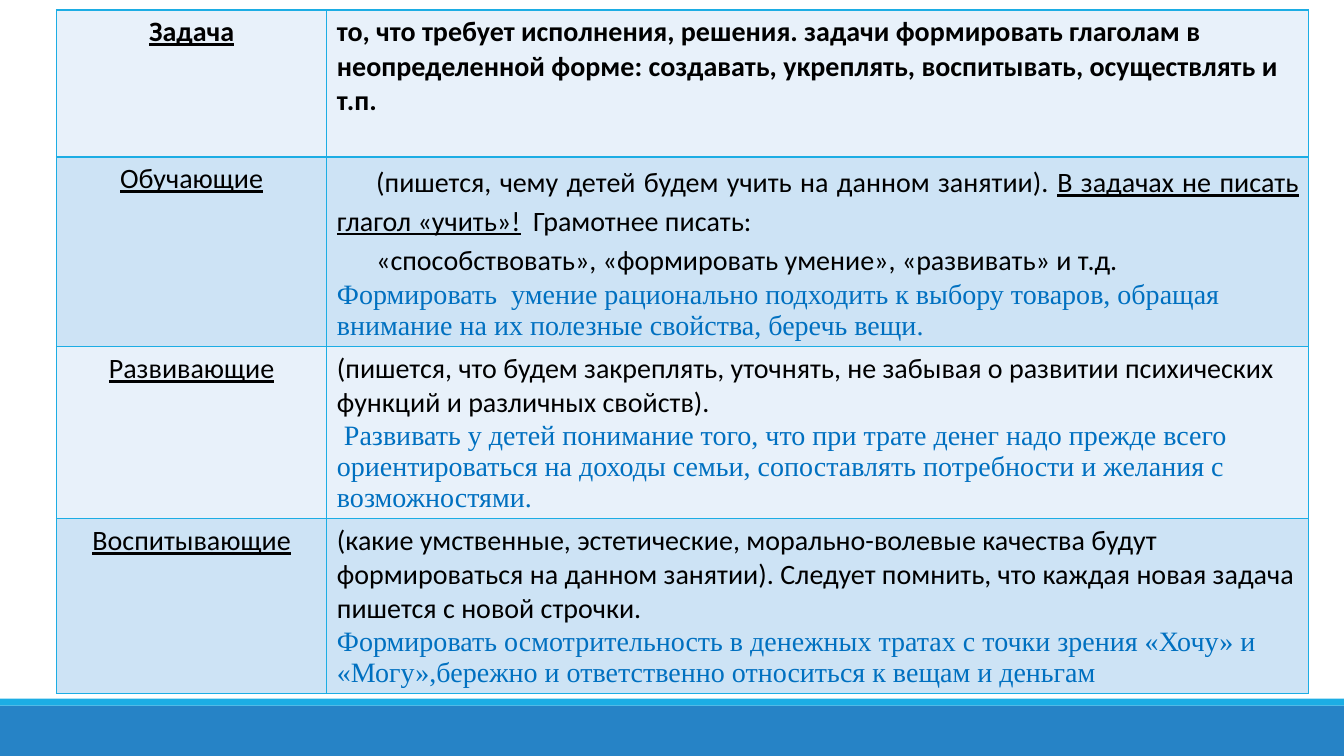
from lxml.etree import SubElement
from pptx import Presentation
from pptx.dml.color import RGBColor
from pptx.enum.shapes import MSO_SHAPE as Shape
from pptx.enum.text import PP_ALIGN as Align
from pptx.oxml.ns import qn
from pptx.util import Pt

THEME = {
    "body": ("Calibri", "000000"),
    "example": ("Times New Roman", "0070C0"),
    "size": 20,
    "rows": ("E8F1FA", "CDE3F5"),
    "border": "1CADE4",
    "border_width": 1,
    "stripe": "1CADE4",
    "footer": "2683C6",
}

# Content: (heading, paragraphs, row height); a paragraph is (kind, runs),
# a run is (text, underlined)
TASKS = [
    ("Задача", [
        ("bold", [("то, что требует исполнения, решения. задачи формировать глаголам в "
                   "неопределенной форме: создавать, укреплять, воспитывать, "
                   "осуществлять и т.п.", False)]),
    ], 105),
    ("Обучающие", [
        ("indented", [("(пишется, чему детей будем учить на данном занятии). ", False),
                      ("В задачах не писать глагол «учить»!", True),
                      ("  Грамотнее писать:", False)]),
        ("indented", [("«способствовать», «формировать умение», «развивать» и т.д.", False)]),
        ("example", [("Формировать  умение рационально подходить к выбору товаров, обращая "
                      "внимание на их полезные свойства, беречь вещи.", False)]),
    ], 135.2),
    ("Развивающие", [
        ("plain", [("(пишется, что будем закреплять, уточнять, не забывая о развитии "
                    "психических функций и различных свойств).", False)]),
        ("example", [(" Развивать у детей понимание того, что при трате денег надо прежде "
                      "всего ориентироваться на доходы семьи, сопоставлять потребности и "
                      "желания с возможностями.", False)]),
    ], 122.8),
    ("Воспитывающие", [
        ("plain", [("(какие умственные, эстетические, морально-волевые качества будут "
                    "формироваться на данном занятии). Следует помнить, что каждая новая "
                    "задача пишется с новой строчки.", False)]),
        ("example", [("Формировать осмотрительность в денежных тратах с точки зрения «Хочу» и "
                      "«Могу»,бережно и ответственно относиться к вещам и деньгам", False)]),
    ], 125),
]

# Layout
SLIDE_W, SLIDE_H = 960, 540
TABLE_LEFT, TABLE_TOP = 40.3, 7.2
COLUMNS = (193.2, 701.4)
FOOTER_TOP, STRIPE_H = 504, 5
FIRST_INDENT = 28


def add_band(slide, top, height, color):
    band = slide.shapes.add_shape(Shape.RECTANGLE, 0, Pt(top), Pt(SLIDE_W), Pt(height))
    band.shadow.inherit = False
    band.fill.solid()
    band.fill.fore_color.rgb = RGBColor.from_string(color)
    band.line.fill.background()


def style_cell(cell, fill):
    props = cell._tc.get_or_add_tcPr()
    for side in ("a:lnL", "a:lnR", "a:lnT", "a:lnB"):
        edge = SubElement(props, qn(side), w=str(Pt(THEME["border_width"])))
        SubElement(SubElement(edge, qn("a:solidFill")), qn("a:srgbClr"), val=THEME["border"])
    cell.fill.solid()
    cell.fill.fore_color.rgb = RGBColor.from_string(fill)


def write_paragraph(paragraph, kind, runs):
    if kind == "heading":
        paragraph.alignment = Align.CENTER
    elif kind == "indented":
        paragraph.alignment = Align.JUSTIFY
        paragraph.line_spacing = 1.12
        paragraph.space_after = Pt(0.8)
        props = paragraph._p.get_or_add_pPr()
        props.set("marL", "0")
        props.set("indent", str(Pt(FIRST_INDENT)))
    face, color = THEME["example" if kind == "example" else "body"]
    for text, underlined in runs:
        run = paragraph.add_run()
        run.text = text
        font = run.font
        font.name, font.size = face, Pt(THEME["size"])
        font.bold = kind == "bold"
        font.underline = underlined
        font.color.rgb = RGBColor.from_string(color)


def write_cell(cell, paragraphs):
    frame = cell.text_frame
    for i, (kind, runs) in enumerate(paragraphs):
        paragraph = frame.add_paragraph() if i else frame.paragraphs[0]
        write_paragraph(paragraph, kind, runs)


def main():
    deck = Presentation()
    deck.slide_width, deck.slide_height = Pt(SLIDE_W), Pt(SLIDE_H)
    slide = deck.slides.add_slide(deck.slide_layouts[6])

    # Bottom bands
    add_band(slide, FOOTER_TOP, SLIDE_H - FOOTER_TOP, THEME["footer"])
    add_band(slide, FOOTER_TOP - STRIPE_H, STRIPE_H, THEME["stripe"])

    # Table of tasks
    table_height = sum(height for _, _, height in TASKS)
    tasks = slide.shapes.add_table(len(TASKS), len(COLUMNS), Pt(TABLE_LEFT), Pt(TABLE_TOP),
                                   Pt(sum(COLUMNS)), Pt(table_height)).table
    for column, width in zip(tasks.columns, COLUMNS):
        column.width = Pt(width)
    for r, (heading, paragraphs, height) in enumerate(TASKS):
        tasks.rows[r].height = Pt(height)
        for c in range(len(COLUMNS)):
            style_cell(tasks.cell(r, c), THEME["rows"][r % 2])
        write_cell(tasks.cell(r, 0), [("heading", [(heading, True)])])
        write_cell(tasks.cell(r, 1), paragraphs)
    tasks.cell(0, 0).text_frame.paragraphs[0].runs[0].font.bold = True

    deck.save("out.pptx")


if __name__ == "__main__":
    main()
